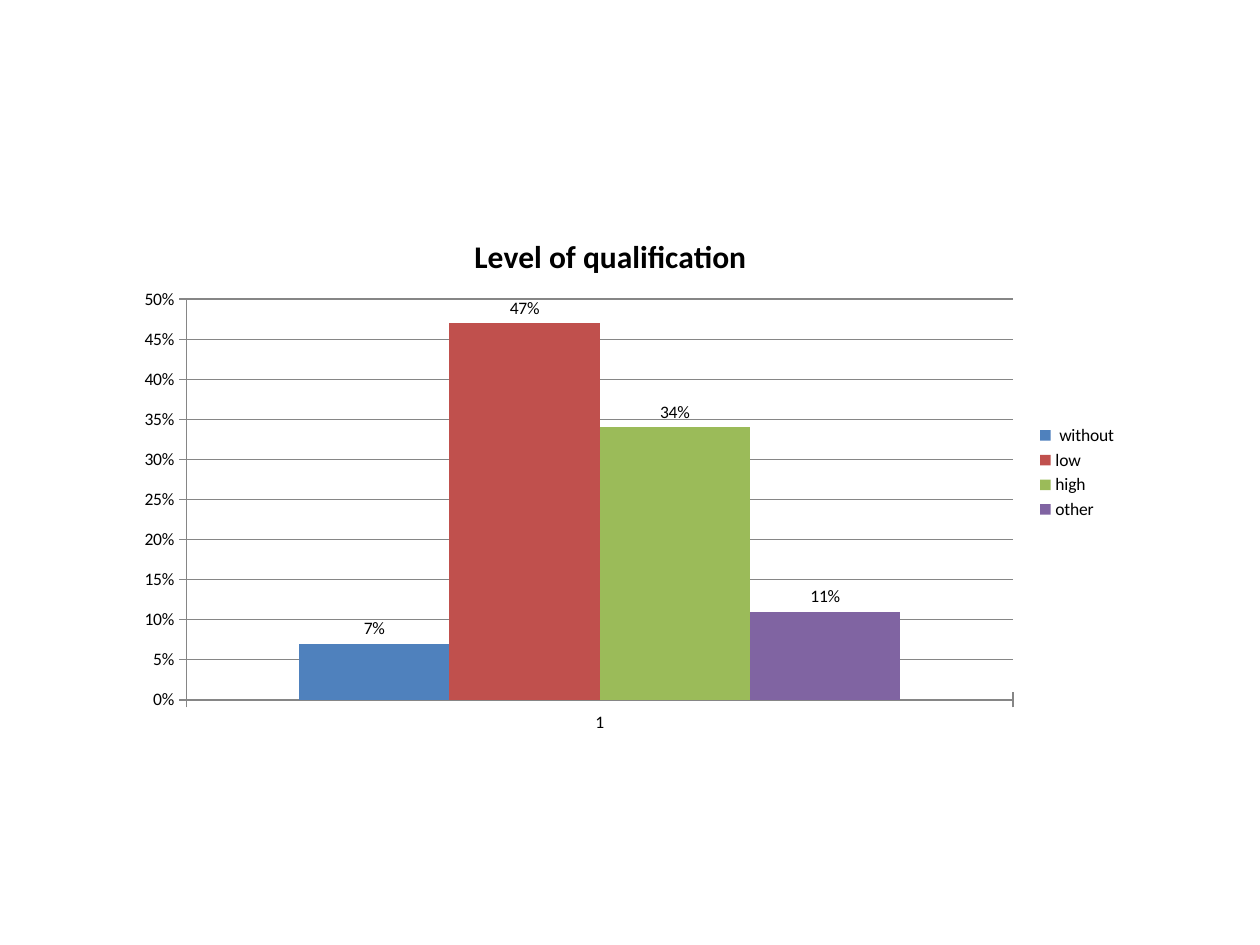
"""Build a slide with a column chart of qualification levels."""
from typing import NamedTuple

import pptx
import pptx.chart.data
import pptx.dml.color
import pptx.enum.chart
import pptx.oxml
import pptx.oxml.ns
import pptx.util
from pptx.dml.color import RGBColor
from pptx.util import Inches

BLACK = RGBColor(0x00, 0x00, 0x00)
GRAY = RGBColor(0x86, 0x86, 0x86)
BLUE = RGBColor(0x4F, 0x81, 0xBD)
RED = RGBColor(0xC0, 0x50, 0x4D)
GREEN = RGBColor(0x9B, 0xBB, 0x59)
PURPLE = RGBColor(0x80, 0x64, 0xA2)


class Level(NamedTuple):
    name: str
    share: float
    color: RGBColor


LEVELS = [
    Level(" without ", 0.07, BLUE),
    Level("low", 0.47, RED),
    Level("high", 0.34, GREEN),
    Level("other", 0.11, PURPLE),
]


def set_layout(parent, before: tuple[str, ...], **values: float | str) -> None:
    for old in parent.findall(pptx.oxml.ns.qn("c:layout")):
        parent.remove(old)
    items = "".join(f'<c:{key} val="{value}"/>' for key, value in values.items())
    layout = pptx.oxml.parse_xml(
        f'<c:layout {pptx.oxml.ns.nsdecls("c")}>'
        f"<c:manualLayout>{items}</c:manualLayout></c:layout>"
    )
    parent.insert_element_before(layout, *before)


def style_line(line) -> None:
    line.color.rgb = GRAY
    line.width = pptx.util.Pt(0.75)


def style_title(chart) -> None:
    tf = chart.chart_title.text_frame
    tf.text = "Level of qualification"
    font = tf.paragraphs[0].font
    font.name, font.size, font.bold = "Calibri", pptx.util.Pt(18), True
    font.color.rgb = BLACK
    chart.chart_title.include_in_layout = False
    set_layout(chart.chart_title._element, ("c:overlay",),
               xMode="edge", yMode="edge", x=0.34, y=0.05)


def style_axes(chart) -> None:
    for axis in (chart.category_axis, chart.value_axis):
        axis.major_tick_mark = pptx.enum.chart.XL_TICK_MARK.CROSS
        style_line(axis.format.line)
    axis = chart.value_axis
    axis.minimum_scale, axis.maximum_scale, axis.major_unit = 0, 0.5, 0.05
    axis.tick_labels.number_format = "0%"
    axis.tick_labels.number_format_is_linked = False
    axis.has_major_gridlines = True
    style_line(axis.major_gridlines.format.line)


def style_columns(plot, levels: list[Level]) -> None:
    plot.gap_width, plot.overlap = 150, 0
    plot.vary_by_categories = False
    for series, level in zip(plot.series, levels):
        series.format.fill.solid()
        series.format.fill.fore_color.rgb = level.color
        labels = series.data_labels
        labels.show_value = True
        labels.number_format = "0%"
        labels.number_format_is_linked = False
        labels.position = pptx.enum.chart.XL_LABEL_POSITION.OUTSIDE_END


def add_level_chart(s, levels: list[Level]) -> None:
    data = pptx.chart.data.CategoryChartData(number_format="0%")
    data.categories = ["1"]
    for level in levels:
        data.add_series(level.name, [level.share])
    chart = s.shapes.add_chart(
        pptx.enum.chart.XL_CHART_TYPE.COLUMN_CLUSTERED,
        Inches(1), Inches(1.6), Inches(8), Inches(4.3), data,
    ).chart
    chart.font.name, chart.font.size = "Calibri", pptx.util.Pt(10)
    chart.font.color.rgb = BLACK
    chart.has_legend = True
    chart.legend.position = pptx.enum.chart.XL_LEGEND_POSITION.RIGHT
    chart.legend.include_in_layout = False
    style_title(chart)
    style_axes(chart)
    style_columns(chart.plots[0], levels)
    plot_area = chart._chartSpace.chart.plotArea
    for old in plot_area.findall(pptx.oxml.ns.qn("c:layout")):
        plot_area.remove(old)
    set_layout(plot_area, ("c:barChart",), layoutTarget="inner",
               xMode="edge", yMode="edge", x=0.06, y=0.18, w=0.82, h=0.74)


def main() -> None:
    prs = pptx.Presentation()
    prs.slide_width, prs.slide_height = Inches(10), Inches(7.5)
    s = prs.slides.add_slide(prs.slide_layouts[6])
    add_level_chart(s, LEVELS)
    prs.save("out.pptx")


if __name__ == "__main__":
    main()
